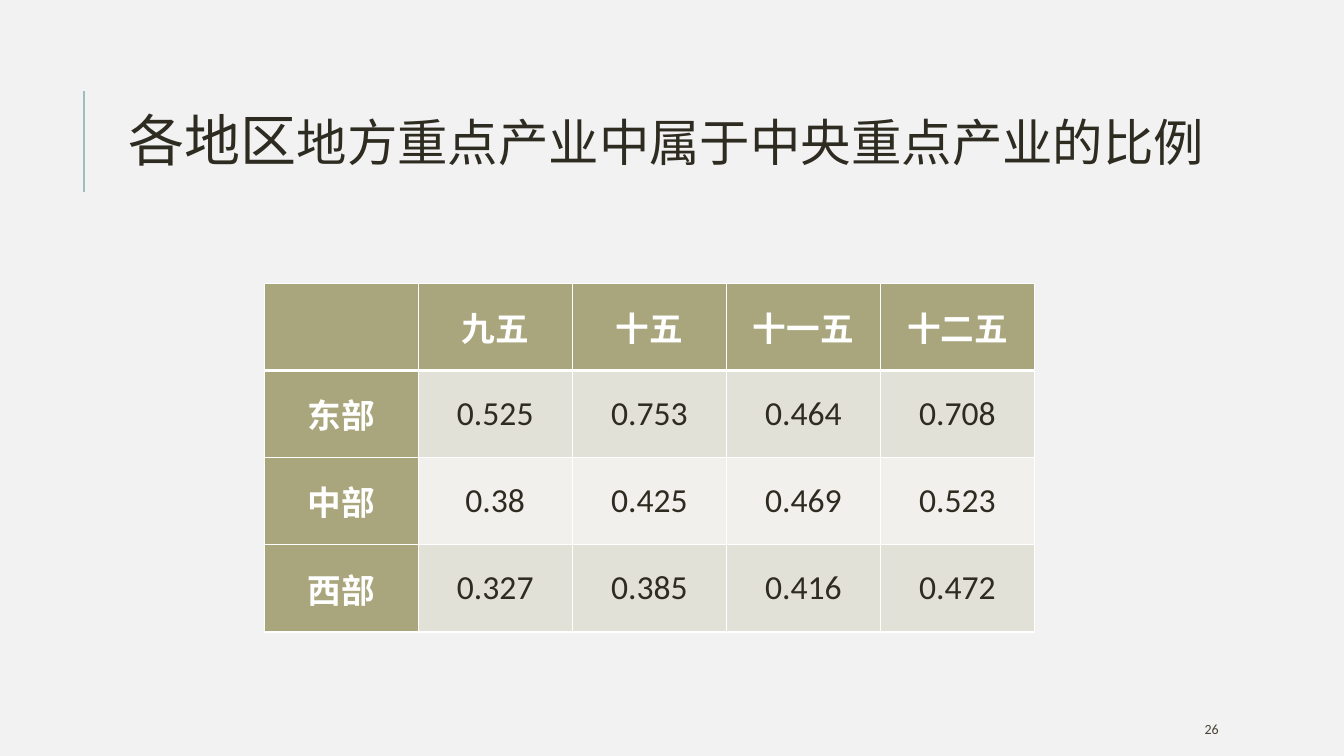
from lxml import etree
from pptx import Presentation
from pptx.dml.color import RGBColor
from pptx.enum.shapes import MSO_CONNECTOR
from pptx.enum.text import MSO_ANCHOR, MSO_AUTO_SIZE, PP_ALIGN
from pptx.oxml.ns import qn
from pptx.util import Inches, Pt

STRAIGHT = MSO_CONNECTOR.STRAIGHT
MIDDLE = MSO_ANCHOR.MIDDLE
FIT_SHAPE = MSO_AUTO_SIZE.SHAPE_TO_FIT_TEXT
LEFT, CENTER = PP_ALIGN.LEFT, PP_ALIGN.CENTER

WIDTH, HEIGHT = Inches(13.33), Inches(7.5)
COLUMN, ROW = Inches(1.528), Inches(0.865)
LATIN, CHINESE = "Calibri", "Noto Sans CJK SC"
COLORS = {
    "page": "F2F2F2",
    "accent": "9CBEBD",
    "ink": "2E2B21",
    "number": "474233",
    "white": "FFFFFF",
    "header": "A9A57C",
    "odd": "E2E1D7",
    "even": "F1F0EC",
}
TITLE = [("各地区", 40), ("地方重点产业中属于中央重点产业的比例", 36)]
RATIOS = [
    ["", "九五", "十五", "十一五", "十二五"],
    ["东部", "0.525", "0.753", "0.464", "0.708"],
    ["中部", "0.38", "0.425", "0.469", "0.523"],
    ["西部", "0.327", "0.385", "0.416", "0.472"],
]


def rgb(name):
    """Return the named colour."""
    return RGBColor.from_string(COLORS[name])


def style_span(span, size, color, latin=LATIN, bold=False):
    """Set the font of a run, with the Chinese face for East Asian text."""
    span.font.size = Pt(size)
    span.font.bold = bold
    span.font.name = latin
    span.font.color.rgb = rgb(color)
    east_asian = etree.SubElement(span.font._element, qn("a:ea"))
    east_asian.set("typeface", CHINESE)


def add_text(page, left, top, width, height, spans, color, latin, align):
    """Add a one-paragraph text box of (text, size) spans."""
    box = page.shapes.add_textbox(left, top, width, height)
    frame = box.text_frame
    frame.word_wrap = True
    frame.vertical_anchor = MIDDLE
    para = frame.paragraphs[0]
    para.alignment = align
    for text, size in spans:
        span = para.add_run()
        span.text = text
        style_span(span, size, color, latin)
    return box


def add_title(page):
    """Add the centred title with its first-line indent."""
    box = add_text(page, 0, Inches(1), Inches(12.05), Inches(0.77),
                   TITLE, "ink", CHINESE, CENTER)
    box.text_frame.auto_size = FIT_SHAPE
    properties = box.text_frame.paragraphs[0]._p.get_or_add_pPr()
    properties.set("marL", "0")
    properties.set("indent", str(Inches(1.17)))


def add_accent_line(page):
    """Add the thin upright line beside the title."""
    line = page.shapes.add_connector(
        STRAIGHT, Inches(0.83), Inches(1.9), Inches(0.83), Inches(0.9))
    line.line.color.rgb = rgb("accent")
    line.line.width = Pt(1.5)
    etree.SubElement(line._element.spPr, qn("a:effectLst"))


def set_borders(cell, top, bottom):
    """Draw white borders round a cell, with top and bottom widths in points."""
    properties = cell._tc.get_or_add_tcPr()
    widths = {"lnL": 1, "lnR": 1, "lnT": top, "lnB": bottom}
    for position, (side, width) in enumerate(widths.items()):
        border = etree.Element(qn(f"a:{side}"), w=str(Pt(width)))
        fill = etree.SubElement(border, qn("a:solidFill"))
        etree.SubElement(fill, qn("a:srgbClr"), val=COLORS["white"])
        properties.insert(position, border)


def fill_cell(cell, text, row, column):
    """Write and style one table cell by its place in the grid."""
    heading = row == 0 or column == 0
    band = "odd" if row % 2 else "even"
    cell.fill.solid()
    cell.fill.fore_color.rgb = rgb("header" if heading else band)
    cell.margin_left = cell.margin_right = Inches(0.07)
    cell.margin_top = cell.margin_bottom = 0
    cell.vertical_anchor = MIDDLE
    set_borders(cell, 3 if row == 1 else 1, 3 if row == 0 else 1)
    if text:
        cell.text_frame.text = text
        para = cell.text_frame.paragraphs[0]
        para.alignment = CENTER
        style_span(para.runs[0], 24, "white" if heading else "ink", bold=heading)


def add_ratio_table(page):
    """Add the table of ratios by region and plan period."""
    rows, columns = len(RATIOS), len(RATIOS[0])
    table = page.shapes.add_table(
        rows, columns, Inches(2.62), Inches(2.81),
        COLUMN * columns, ROW * rows).table
    for column in table.columns:
        column.width = COLUMN
    for row, texts in enumerate(RATIOS):
        table.rows[row].height = ROW
        for column, text in enumerate(texts):
            fill_cell(table.cell(row, column), text, row, column)


def main():
    """Build the slide and save the deck."""
    deck = Presentation()
    deck.slide_width, deck.slide_height = WIDTH, HEIGHT
    page = deck.slides.add_slide(deck.slide_layouts[6])
    page.background.fill.solid()
    page.background.fill.fore_color.rgb = rgb("page")
    add_accent_line(page)
    add_text(page, Inches(11.85), Inches(7.08), Inches(1.06), Inches(0.3),
             [("26", 10)], "number", LATIN, LEFT)
    add_ratio_table(page)
    add_title(page)
    deck.save("out.pptx")


if __name__ == "__main__":
    main()
